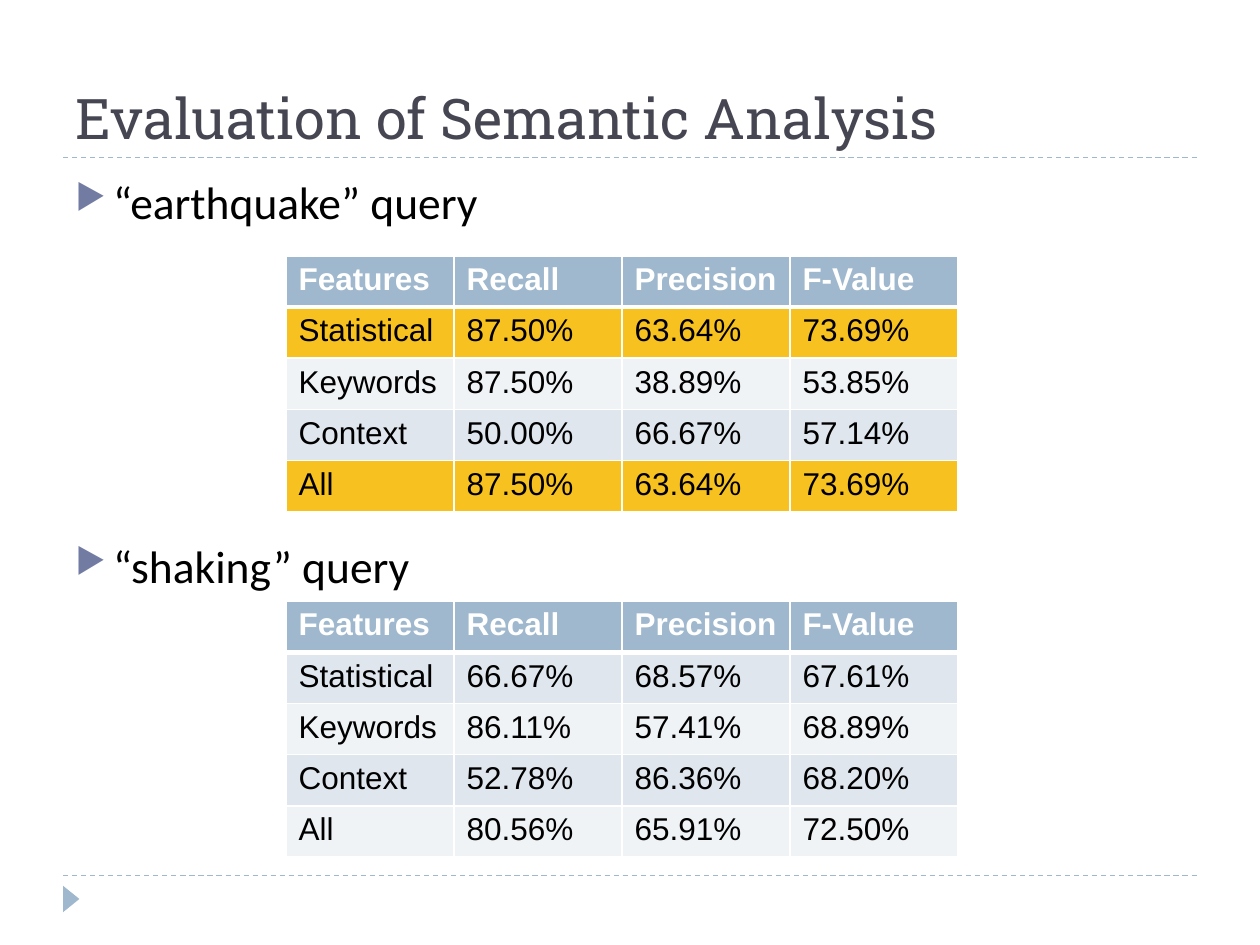
"""Build the slide that evaluates semantic analysis for two queries."""
from lxml.etree import SubElement
from pptx import Presentation
from pptx.dml.color import RGBColor
from pptx.enum.dml import MSO_LINE
from pptx.enum.shapes import MSO_CONNECTOR, MSO_SHAPE
from pptx.enum.text import MSO_ANCHOR, PP_ALIGN
from pptx.oxml import parse_xml
from pptx.oxml.ns import nsdecls, qn
from pptx.util import Inches, Pt

BLUE = RGBColor(0x9F, 0xB8, 0xCD)
DARK = RGBColor(0x46, 0x46, 0x53)
GOLD = RGBColor(0xF7, 0xC1, 0x20)
BANDS = RGBColor(0xF0, 0xF3, 0xF6), RGBColor(0xDF, 0xE6, 0xED)
WHITE = RGBColor(0xFF, 0xFF, 0xFF)
BLACK = RGBColor(0x00, 0x00, 0x00)
HEADER = ["Features", "Recall", "Precision", "F-Value"]
EARTHQUAKE = [
    HEADER,
    ["Statistical", "87.50%", "63.64%", "73.69%"],
    ["Keywords", "87.50%", "38.89%", "53.85%"],
    ["Context", "50.00%", "66.67%", "57.14%"],
    ["All", "87.50%", "63.64%", "73.69%"],
]
SHAKING = [
    HEADER,
    ["Statistical", "66.67%", "68.57%", "67.61%"],
    ["Keywords", "86.11%", "57.41%", "68.89%"],
    ["Context", "52.78%", "86.36%", "68.20%"],
    ["All", "80.56%", "65.91%", "72.50%"],
]

prs = Presentation()
prs.slide_width, prs.slide_height = Inches(10), Inches(7.5)
UNIT = prs.slide_width / 40


def grid(*cells):
    return [round(n * UNIT) for n in cells]


def add_run(p, text, font, size, color, bold=False):
    r = p.add_run()
    r.text = text
    r.font.name, r.font.size, r.font.bold = font, Pt(size), bold
    r.font.color.rgb = color


s = prs.slides.add_slide(prs.slide_layouts[5])

for row in (27.8, 5):
    line = s.shapes.add_connector(MSO_CONNECTOR.STRAIGHT, *grid(2, row, 38, row))
    line.line.color.rgb = BLUE
    line.line.width = Pt(0.75)
    line.line.dash_style = MSO_LINE.DASH
    SubElement(line._element.spPr, qn("a:effectLst"))

marker = s.shapes.add_shape(MSO_SHAPE.ISOSCELES_TRIANGLE, *grid(1.84, 28.28, 0.84, 0.52))
marker.rotation = 90
marker.shadow.inherit = False
marker.fill.solid()
marker.fill.fore_color.rgb = BLUE
marker.line.fill.background()

title = s.shapes.title
title.left, title.top, title.width, title.height = grid(2, 0.68, 36, 4.32)
tf = title.text_frame
tf.vertical_anchor = MSO_ANCHOR.BOTTOM
p = tf.paragraphs[0]
p.alignment = PP_ALIGN.LEFT
add_run(p, "Evaluation of Semantic Analysis", "Roboto Slab", 32, DARK)

tf = s.shapes.add_textbox(*grid(2, 5.32, 36, 21.6)).text_frame
tf.word_wrap = True
for i, (query, space) in enumerate([("“earthquake” query", 6), ("“shaking” query", 177)]):
    p = tf.add_paragraph() if i else tf.paragraphs[0]
    p.space_before = Pt(space)
    pPr = p._p.get_or_add_pPr()
    pPr.set("marL", str(Inches(0.3)))
    pPr.set("indent", str(-Inches(0.3)))
    SubElement(SubElement(pPr, qn("a:buClr")), qn("a:srgbClr"), val="727CA3")
    SubElement(pPr, qn("a:buSzPct"), val="76000")
    SubElement(pPr, qn("a:buChar"), char="▶")
    add_run(p, query, "Calibri", 26, BLACK)

for top, data, best in [(8.12, EARTHQUAKE, (1, 4)), (19.08, SHAKING, ())]:
    box = grid(9.08, top, 21.33, 8.13)
    table = s.shapes.add_table(len(data), len(HEADER), *box).table
    for i, values in enumerate(data):
        for j, value in enumerate(values):
            cell = table.cell(i, j)
            cell.fill.solid()
            cell.fill.fore_color.rgb = BLUE if i == 0 else GOLD if i in best else BANDS[i % 2]
            color = BLACK if i else WHITE
            add_run(cell.text_frame.paragraphs[0], value, "Arial", 18, color, i == 0)
            tcPr = cell._tc.get_or_add_tcPr()
            for k, side in enumerate("LRTB"):
                thick = (i, side) in [(0, "B"), (1, "T")]
                tcPr.insert(k, parse_xml(
                    f'<a:ln{side} {nsdecls("a")} w="{Pt(3 if thick else 1)}">'
                    f'<a:solidFill><a:srgbClr val="{WHITE}"/></a:solidFill></a:ln{side}>'))

prs.save("out.pptx")
